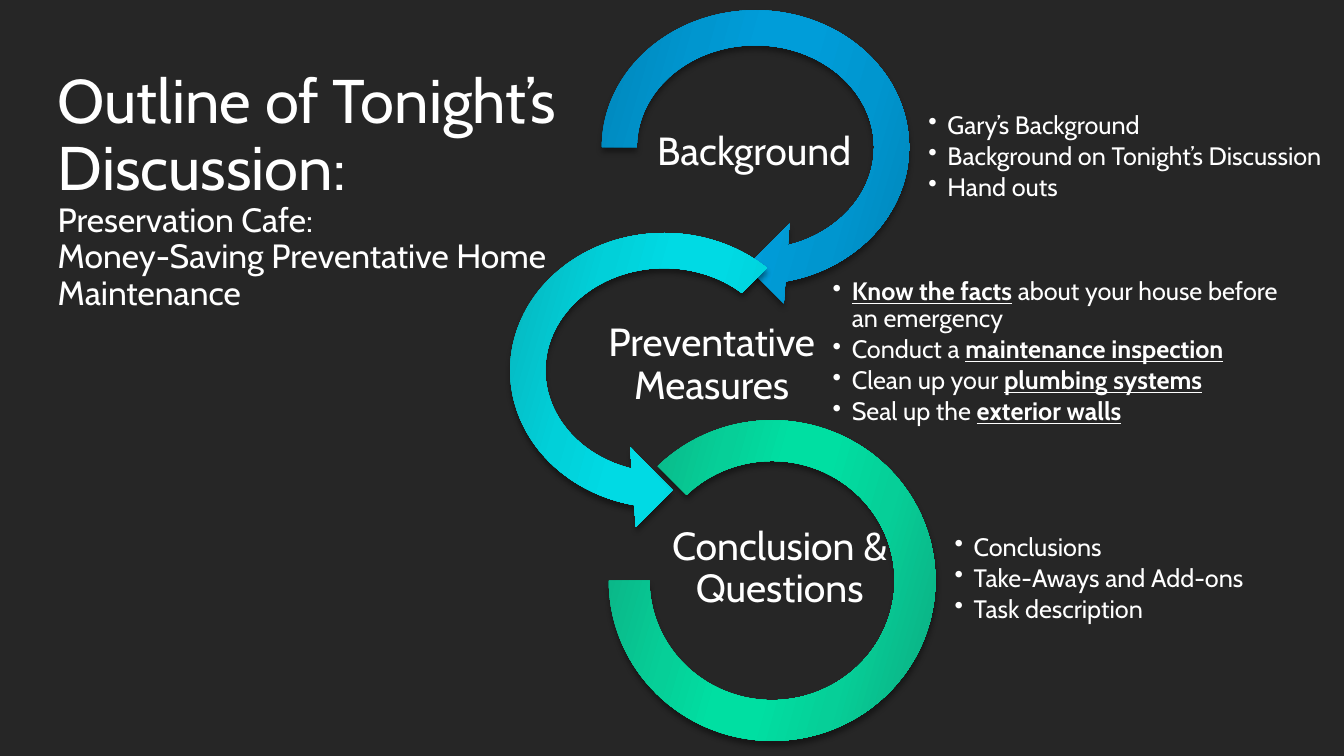
"""Build the outline slide of three linked arcs with topic lists."""
import dataclasses

import lxml.etree
import pptx
import pptx.dml.color
import pptx.enum.shapes
import pptx.enum.text
import pptx.oxml.ns
import pptx.util

Pt = pptx.util.Pt
RGB = pptx.dml.color.RGBColor.from_string
KIND = pptx.enum.shapes.MSO_SHAPE
ALIGN = pptx.enum.text.PP_ALIGN
MID = pptx.enum.text.MSO_ANCHOR.MIDDLE
qn = pptx.oxml.ns.qn


@dataclasses.dataclass(frozen=True)
class Theme:
    """Colours, font and type sizes."""
    back: str = "262626"
    ink: str = "FFFFFF"
    shade: str = "000000"
    blue: tuple = ("0080B2", "0096CF", "009DD9")
    cyan: tuple = ("09AAB2", "01D0D9", "00DAE4")
    green: tuple = ("0DA97F", "06CF98", "00DFA2")
    font: str = "Cabin"
    head: int = 44
    sub: int = 24
    label: int = 28
    item: int = 18


LOOK = Theme()

TITLE = [
    ("Outline of Tonight’s", LOOK.head),
    ("Discussion:", LOOK.head),
    ("Preservation Cafe:", LOOK.sub),
    ("Money-Saving Preventative Home Maintenance", LOOK.sub),
]
TITLE_BOX = (34, 46, 429, 181.5)

STEPS = [
    {
        "label": "Background",
        "label_box": (459.4, 78.5, 158.4, 61.2),
        "items": [("Gary’s Background", "", ""),
                  ("Background on Tonight’s Discussion", "", ""),
                  ("Hand outs", "", "")],
        "list_box": (662.4, 76.3, 290.2, 72),
        "arc": KIND.CIRCULAR_ARROW,
        "arc_box": (414, -8.6, 251.3, 227.5),
        "bend": (0.11, 11.42, 45, 108, 0.125),
        "hues": LOOK.blue,
    },
    {
        "label": "Preventative Measures",
        "label_box": (424.1, 230.4, 168.5, 61.2),
        "items": [("", "Know the facts", " about your house before an emergency"),
                  ("Conduct a ", "maintenance inspection", ""),
                  ("Clean up your ", "plumbing systems", ""),
                  ("Seal up the ", "exterior walls", "")],
        "list_box": (594, 199.4, 325.4, 105.1),
        "arc": KIND.LEFT_CIRCULAR_ARROW,
        "arc_box": (348.5, 150.5, 252, 228.2),
        "bend": (0.11, 11.42, 63, 189, 0.125),
        "hues": LOOK.cyan,
    },
    {
        "label": "Conclusion & Questions",
        "label_box": (474.5, 375.8, 164.9, 61.2),
        "items": [("Conclusions", "", ""),
                  ("Take-Aways and Add-ons", "", ""),
                  ("Task description", "", "")],
        "list_box": (681.1, 369.4, 244.1, 88.6),
        "arc": KIND.BLOCK_ARC,
        "arc_box": (434.9, 300.2, 233.3, 229),
        "bend": (135, 108, 0.127),
        "hues": LOOK.green,
    },
]
STOPS = [(0, 0), (30, 1), (45, 2), (55, 2), (73, 1), (100, 0)]
INDENT = 13.7


def place(box):
    return [Pt(n) for n in box]


def node(parent, tag, **attrs):
    child = lxml.etree.SubElement(parent, qn(tag))
    for key, value in attrs.items():
        child.set(key, str(value))
    return child


def style(para, size, after=0):
    para.line_spacing = 0.9
    para.space_after = Pt(after)
    para.font.name = LOOK.font
    para.font.size = Pt(size)
    para.font.color.rgb = RGB(LOOK.ink)


def add_title(slide):
    title = slide.shapes.title
    title.left, title.top, title.width, title.height = place(TITLE_BOX)
    frame = title.text_frame
    frame.word_wrap = True
    frame.auto_size = pptx.enum.text.MSO_AUTO_SIZE.NONE
    frame.vertical_anchor = MID
    para = frame.paragraphs[0]
    para.alignment = ALIGN.LEFT
    style(para, LOOK.sub)
    for row, (text, size) in enumerate(TITLE):
        if row:
            para.add_line_break()
        run = para.add_run()
        run.text = text
        run.font.size = Pt(size)


def add_arc(slide, step):
    arc = slide.shapes.add_shape(step["arc"], *place(step["arc_box"]))
    for spot, value in enumerate(step["bend"]):
        arc.adjustments[spot] = value
    arc.line.fill.background()
    arc.fill.gradient()
    arc.fill.gradient_angle = 344
    arc.shadow.inherit = False
    props = arc.element.spPr
    stops = props.find(".//" + qn("a:gsLst"))
    for old in list(stops):
        stops.remove(old)
    for share, hue in STOPS:
        stop = node(stops, "a:gs", pos=share * 1000)
        node(stop, "a:srgbClr", val=step["hues"][hue])
    shadow = node(props.find(qn("a:effectLst")), "a:outerShdw",
                  blurRad=Pt(4), dist=Pt(3.4), dir=90 * 60000, rotWithShape=0)
    shade = node(shadow, "a:srgbClr", val=LOOK.shade)
    node(shade, "a:alpha", val=40000)


def add_box(slide, box, inset):
    frame = slide.shapes.add_textbox(*place(box)).text_frame
    frame.word_wrap = True
    frame.vertical_anchor = MID
    frame.margin_left = frame.margin_right = Pt(inset)
    frame.margin_top = frame.margin_bottom = Pt(inset)
    return frame


def add_list(slide, step):
    frame = add_box(slide, step["list_box"], 0.7)
    for row, parts in enumerate(step["items"]):
        para = frame.add_paragraph() if row else frame.paragraphs[0]
        para.level = 1
        props = para._p.get_or_add_pPr()
        props.set("marL", str(Pt(INDENT)))
        props.set("indent", str(-Pt(INDENT)))
        node(props, "a:buChar", char="•")
        style(para, LOOK.item, 0.15 * LOOK.item)
        for spot, text in enumerate(parts):
            if text:
                run = para.add_run()
                run.text = text
                if spot == 1:
                    run.font.bold = run.font.underline = True


def add_label(slide, step):
    para = add_box(slide, step["label_box"], 1.4).paragraphs[0]
    para.text = step["label"]
    para.alignment = ALIGN.CENTER
    style(para, LOOK.label, 0.35 * LOOK.label)


def main():
    deck = pptx.Presentation()
    deck.slide_width, deck.slide_height = Pt(960), Pt(540)
    slide = deck.slides.add_slide(deck.slide_layouts[5])
    slide.background.fill.solid()
    slide.background.fill.fore_color.rgb = RGB(LOOK.back)
    add_title(slide)
    for step in STEPS:
        add_arc(slide, step)
        add_list(slide, step)
        add_label(slide, step)
    deck.save("out.pptx")


if __name__ == "__main__":
    main()
